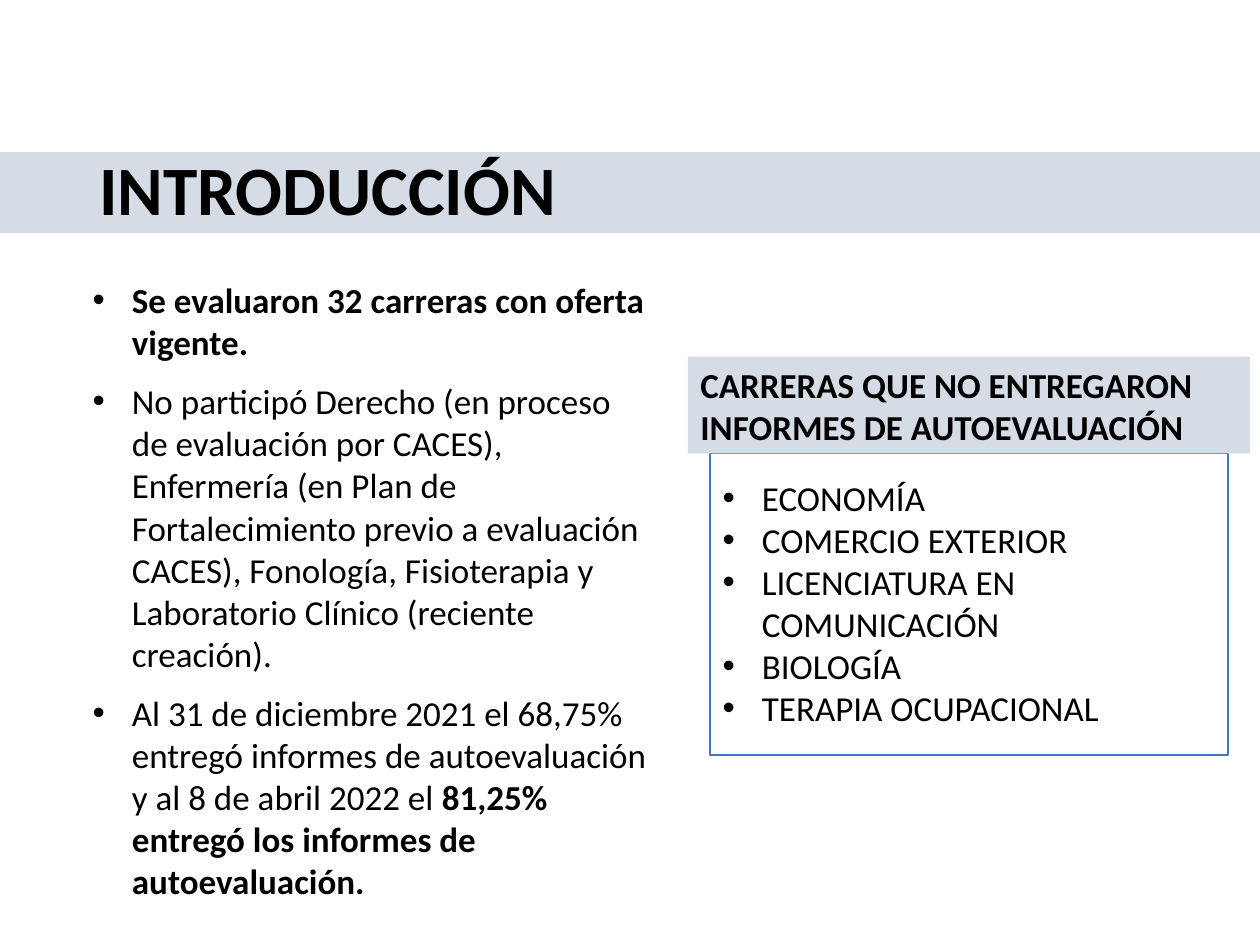
from collections import namedtuple
from dataclasses import dataclass

from lxml import etree
from pptx import Presentation
from pptx import util as u
from pptx.dml.color import RGBColor
from pptx.enum import shapes, text
from pptx.oxml.ns import qn

Box = namedtuple("Box", "left top width height")


@dataclass(frozen=True)
class Theme:
    """Colours, font and type sizes of the slide."""
    band: RGBColor = RGBColor(0xD6, 0xDC, 0xE5)
    ink: RGBColor = RGBColor(0, 0, 0)
    paper: RGBColor = RGBColor(0xFF, 0xFF, 0xFF)
    outline: RGBColor = RGBColor(0x44, 0x72, 0xC4)
    font: str = "Calibri"
    title: float = 39.6
    body: float = 20
    gap: float = 9.8


THEME = Theme()
POINTS = [
    [("Se evaluaron 32 carreras con oferta vigente.", True)],
    [("No participó Derecho (en proceso de evaluación por CACES), Enfermería "
      "(en Plan de Fortalecimiento previo a evaluación CACES), Fonología, "
      "Fisioterapia y Laboratorio Clínico (reciente creación).", False)],
    [("Al 31 de diciembre 2021 el 68,75% entregó informes de autoevaluación "
      "y al 8 de abril 2022 el ", False),
     ("81,25% entregó los informes de autoevaluación.", True)],
]
CAREERS = ["ECONOMÍA", "COMERCIO EXTERIOR", "LICENCIATURA EN COMUNICACIÓN",
           "BIOLOGÍA", "TERAPIA OCUPACIONAL"]


def add_bullet(para):
    """Give a paragraph a round bullet with a hanging indent."""
    props = para._p.get_or_add_pPr()
    indent = u.Cm(0.79)
    props.set("marL", str(indent))
    props.set("indent", str(-indent))
    etree.SubElement(props, qn("a:buFont")).set("typeface", "Arial")
    etree.SubElement(props, qn("a:buChar")).set("char", "•")


def write(frame, paragraphs, size=THEME.body, bullet=False, gap=0, spacing=1.0,
          anchor=text.MSO_ANCHOR.TOP, left=0.25, top=0.13):
    """Fill a text frame with paragraphs made of (wording, bold) spans."""
    frame.word_wrap = True
    frame.vertical_anchor = anchor
    frame.margin_left, frame.margin_top = u.Cm(left), u.Cm(top)
    for index, spans in enumerate(paragraphs):
        para = frame.paragraphs[0] if index == 0 else frame.add_paragraph()
        if bullet:
            add_bullet(para)
        para.alignment = text.PP_ALIGN.LEFT
        para.line_spacing = spacing
        if index and gap:
            para.space_before = u.Pt(gap)
        for wording, bold in spans:
            span = para.add_run()
            span.text = wording
            span.font.name = THEME.font
            span.font.size = u.Pt(size)
            span.font.bold = bold
            span.font.color.rgb = THEME.ink


def add_panel(page, box, fill, line=None):
    """Add a flat rectangle and return its text frame."""
    panel = page.shapes.add_shape(shapes.MSO_SHAPE.RECTANGLE, *map(u.Cm, box))
    panel.shadow.inherit = False
    panel.fill.solid()
    panel.fill.fore_color.rgb = fill
    if line is None:
        panel.line.fill.background()
    else:
        panel.line.color.rgb = line
        panel.line.width = u.Pt(1)
    return panel.text_frame


def add_title(page, box):
    """Place the title on a full-width band."""
    write(add_panel(page, box, THEME.band), [[("INTRODUCCIÓN", True)]],
          size=THEME.title, spacing=0.9, anchor=text.MSO_ANCHOR.MIDDLE, left=2)


def add_points(page, box):
    """Place the bulleted summary of the evaluation."""
    frame = page.shapes.add_textbox(*map(u.Cm, box)).text_frame
    write(frame, POINTS, bullet=True, gap=THEME.gap)


def add_careers(page, box):
    """Place the heading and, inset below it, the outlined list of careers."""
    heading_height, inset = 1.95, 0.45
    listing = Box(box.left + inset, box.top + heading_height,
                  box.width - 2 * inset, box.height - heading_height)
    write(add_panel(page, listing, THEME.paper, THEME.outline),
          [[(career, False)] for career in CAREERS], bullet=True, top=0.47)
    heading = box._replace(height=heading_height)
    write(add_panel(page, heading, THEME.band),
          [[("CARRERAS QUE NO ENTREGARON INFORMES DE AUTOEVALUACIÓN", True)]])


def main():
    """Build the slide and save it."""
    deck = Presentation()
    deck.slide_width, deck.slide_height = u.Cm(25.4), u.Cm(19.05)
    page = deck.slides.add_slide(deck.slide_layouts[6])
    add_title(page, Box(0, 3.07, 25.4, 1.63))
    add_points(page, Box(1.62, 5.49, 11.81, 13.41))
    add_careers(page, Box(13.87, 7.19, 11.33, 8.03))
    deck.save("out.pptx")


if __name__ == "__main__":
    main()
